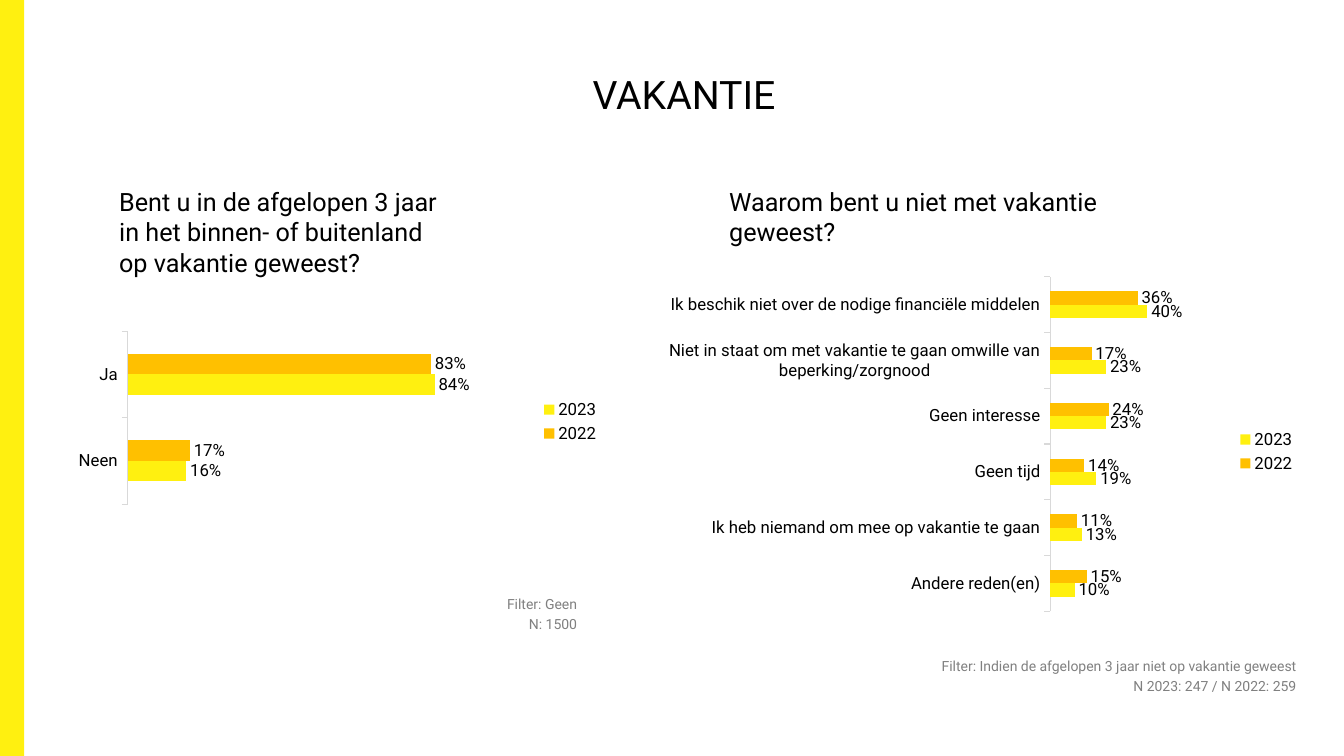
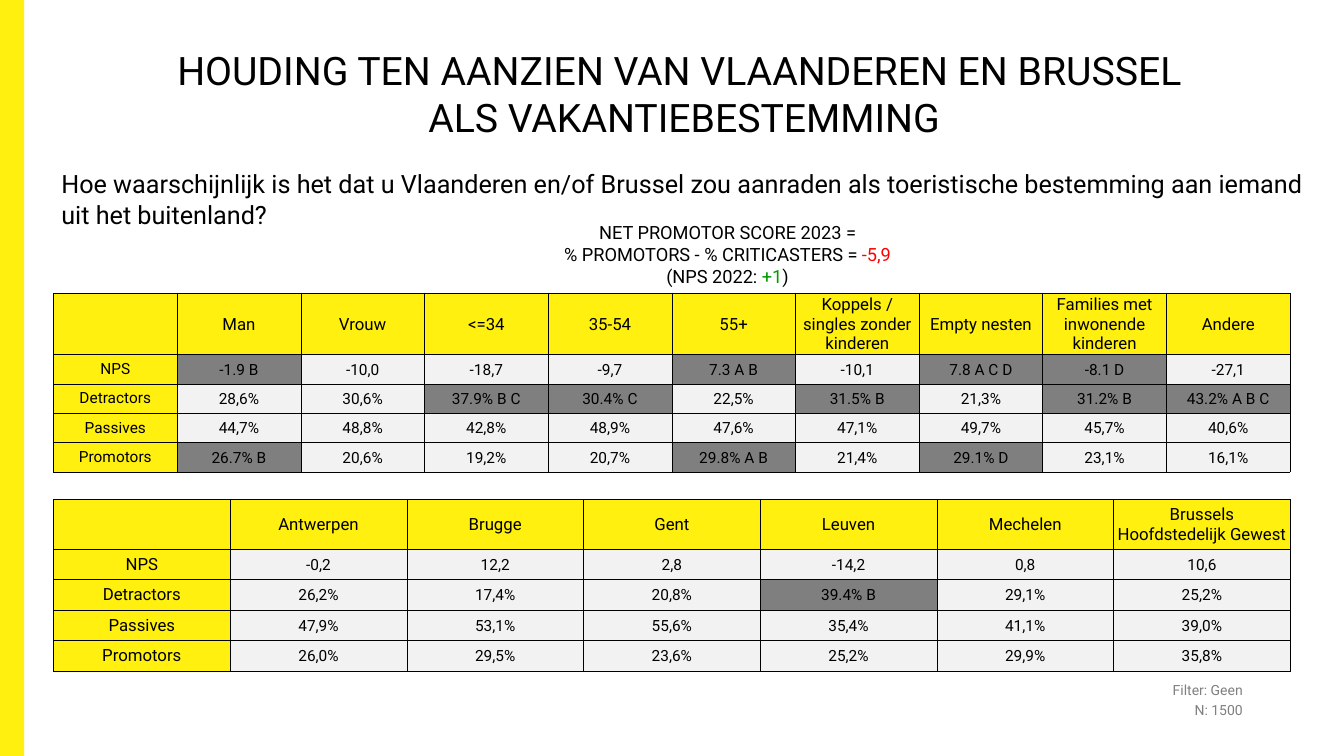
"""Build two survey slides about holidays: bar charts and score tables."""
import dataclasses
import typing

import lxml.etree
import pptx
import pptx.chart.data
import pptx.dml.color
import pptx.enum.chart
import pptx.enum.shapes
import pptx.enum.text
import pptx.oxml.ns
import pptx.util

EMU_PER_PX = 9525
FONT = "Roboto"
BLACK, GREY, RED, GREEN = "000000", "808080", "FF0000", "009900"
YELLOW, ORANGE, AXIS = "FFF010", "FFC000", "D9D9D9"
CELL, SIGNIFICANT = "F2F2F2", "7F7F7F"
ALIGN = pptx.enum.text.PP_ALIGN
ANCHOR = pptx.enum.text.MSO_ANCHOR
qn = pptx.oxml.ns.qn


def px(n: int) -> int:
    return pptx.util.Emu(n * EMU_PER_PX)


def rgb(color: str) -> pptx.dml.color.RGBColor:
    return pptx.dml.color.RGBColor.from_string(color)


class Box(typing.NamedTuple):
    left: int
    top: int
    width: int
    height: int

    def emu(self) -> list[int]:
        return [px(n) for n in self]


@dataclasses.dataclass
class BarChart:
    box: Box
    plot: tuple[float, float, float, float]
    categories: list[str]
    values_2022: list[float]
    values_2023: list[float]


@dataclasses.dataclass
class ScoreTable:
    box: Box
    header_height: int
    row_height: int
    label_size: int
    headers: list[str]
    rows: dict[str, list[str]]


def style_font(font, size: float, color: str = BLACK) -> None:
    font.name = FONT
    font.size = pptx.util.Pt(size)
    font.bold = False
    font.color.rgb = rgb(color)


def add_text(s, box: Box, lines: list[str], size: float, color: str = BLACK,
             align=ALIGN.LEFT, anchor=ANCHOR.TOP, gap: float = 0):
    tf = s.shapes.add_textbox(*box.emu()).text_frame
    tf.word_wrap = True
    tf.vertical_anchor = anchor
    for i, line in enumerate(lines):
        p = tf.add_paragraph() if i else tf.paragraphs[0]
        p.text = line
        p.alignment = align
        if i and gap:
            p.space_before = pptx.util.Pt(gap)
        for r in p.runs:
            style_font(r.font, size, color)
    return tf


def add_question(s, box: Box, question: str) -> None:
    add_text(s, box, [question], 18)


def add_filter(s, left: int, top: int, lines: list[str]) -> None:
    add_text(s, Box(left, top, 366, 51), lines, 10, GREY, ALIGN.RIGHT, gap=2.4)


def add_slide(prs, title: str):
    s = prs.slides.add_slide(prs.slide_layouts[6])
    rect = pptx.enum.shapes.MSO_SHAPE.RECTANGLE
    band = s.shapes.add_shape(rect, *Box(0, 0, 23, 720).emu())
    band.shadow.inherit = False
    band.fill.solid()
    band.fill.fore_color.rgb = rgb(YELLOW)
    band.line.fill.background()
    add_text(s, Box(23, 29, 1257, 120), [title], 28,
             align=ALIGN.CENTER, anchor=ANCHOR.MIDDLE)
    return s


def set_plot_layout(chart, plot: tuple[float, float, float, float]) -> None:
    area = chart.element.find(f"{qn('c:chart')}/{qn('c:plotArea')}")
    for old in area.findall(qn("c:layout")):
        area.remove(old)
    layout = lxml.etree.SubElement(area, qn("c:layout"))
    area.insert(0, layout)
    manual = lxml.etree.SubElement(layout, qn("c:manualLayout"))
    settings = {"layoutTarget": "inner", "xMode": "edge", "yMode": "edge"}
    settings.update(zip("xywh", map(str, plot)))
    for tag, value in settings.items():
        lxml.etree.SubElement(manual, qn(f"c:{tag}")).set("val", value)


def add_bar_chart(s, spec_: BarChart) -> None:
    enums = pptx.enum.chart
    data = pptx.chart.data.CategoryChartData(number_format="0%")
    data.categories = spec_.categories
    data.add_series("2022", spec_.values_2022)
    data.add_series("2023", spec_.values_2023)
    chart = s.shapes.add_chart(enums.XL_CHART_TYPE.BAR_CLUSTERED,
                               *spec_.box.emu(), data).chart
    style_font(chart.font, 12)
    chart.has_title = False
    chart.has_legend = True
    chart.legend.position = enums.XL_LEGEND_POSITION.RIGHT
    chart.legend.include_in_layout = False
    style_font(chart.legend.font, 12)

    axis = chart.category_axis
    axis.reverse_order = True
    axis.has_major_gridlines = False
    axis.major_tick_mark = enums.XL_TICK_MARK.OUTSIDE
    axis.format.line.color.rgb = rgb(AXIS)
    axis.format.line.width = pptx.util.Pt(0.75)
    style_font(axis.tick_labels.font, 12)
    scale = chart.value_axis
    scale.minimum_scale, scale.maximum_scale = 0, 1
    scale.has_major_gridlines = False
    scale.visible = False

    plot = chart.plots[0]
    plot.gap_width = 219
    plot.vary_by_categories = False
    for series, color in zip(plot.series, (ORANGE, YELLOW)):
        series.format.fill.solid()
        series.format.fill.fore_color.rgb = rgb(color)
        labels = series.data_labels
        labels.show_value = True
        labels.number_format = "0%"
        labels.number_format_is_linked = False
        labels.position = enums.XL_LABEL_POSITION.OUTSIDE_END
        style_font(labels.font, 12)
    set_plot_layout(chart, spec_.plot)


def add_borders(cell) -> None:
    tc_pr = cell._tc.get_or_add_tcPr()
    for side in "LRTB":
        ln = lxml.etree.SubElement(tc_pr, qn(f"a:ln{side}"), w="6350")
        fill = lxml.etree.SubElement(ln, qn("a:solidFill"))
        lxml.etree.SubElement(fill, qn("a:srgbClr"), val=BLACK)


def fill_cell(cell, text: str, size: float, color: str, tight: bool) -> None:
    if tight:
        cell.margin_left = cell.margin_right = cell.margin_top = px(1)
        cell.margin_bottom = 0
    cell.vertical_anchor = ANCHOR.MIDDLE
    add_borders(cell)
    cell.fill.solid()
    cell.fill.fore_color.rgb = rgb(color)
    p = cell.text_frame.paragraphs[0]
    p.text = text
    p.alignment = ALIGN.CENTER
    for r in p.runs:
        style_font(r.font, size)


def add_score_table(s, t: ScoreTable) -> None:
    n_cols = len(t.headers) + 1
    table = s.shapes.add_table(len(t.rows) + 1, n_cols, *t.box.emu()).table
    table.first_row = table.horz_banding = False
    for column in table.columns:
        column.width = px(t.box.width) // n_cols
    for i, row in enumerate(table.rows):
        row.height = px(t.row_height if i else t.header_height)
    for j, header in enumerate(["", *t.headers]):
        fill_cell(table.cell(0, j), header, 12, YELLOW, j > 0)
    for i, (label, values) in enumerate(t.rows.items(), 1):
        fill_cell(table.cell(i, 0), label, t.label_size, YELLOW, False)
        for j, value in enumerate(values, 1):
            marked = any(c.isalpha() for c in value)
            fill_cell(table.cell(i, j), value, 11,
                      SIGNIFICANT if marked else CELL, True)


HOLIDAY = BarChart(Box(-115, 310, 696, 183), (0.34, 0.03, 0.5, 0.9),
                   ["Ja", "Neen"], [0.83, 0.17], [0.84, 0.16])
REASONS = BarChart(
    Box(603, 253, 641, 354), (0.62, 0.03, 0.36, 0.9),
    ["Ik beschik niet over de nodige financiële middelen",
     "Niet in staat om met vakantie te gaan omwille van beperking/zorgnood",
     "Geen interesse", "Geen tijd",
     "Ik heb niemand om mee op vakantie te gaan", "Andere reden(en)"],
    [0.36, 0.17, 0.24, 0.14, 0.11, 0.15],
    [0.4, 0.23, 0.23, 0.19, 0.13, 0.1])
PROFILES = ScoreTable(
    Box(51, 279, 1178, 169), 57, 28, 11,
    ["Man", "Vrouw", "<=34", "35-54", "55+",
     "Koppels / singles zonder kinderen", "Empty nesten",
     "Families met inwonende kinderen", "Andere"],
    {"NPS": ["-1.9 B", "-10,0", "-18,7", "-9,7", "7.3 A B", "-10,1",
             "7.8 A C D", "-8.1 D", "-27,1"],
     "Detractors": ["28,6%", "30,6%", "37.9% B C", "30.4% C", "22,5%",
                    "31.5% B", "21,3%", "31.2% B", "43.2% A B C"],
     "Passives": ["44,7%", "48,8%", "42,8%", "48,9%", "47,6%", "47,1%",
                  "49,7%", "45,7%", "40,6%"],
     "Promotors": ["26.7% B", "20,6%", "19,2%", "20,7%", "29.8% A B",
                   "21,4%", "29.1% D", "23,1%", "16,1%"]})
CITIES = ScoreTable(
    Box(51, 476, 1178, 163), 47, 29, 12,
    ["Antwerpen", "Brugge", "Gent", "Leuven", "Mechelen",
     "Brussels Hoofdstedelijk Gewest"],
    {"NPS": ["-0,2", "12,2", "2,8", "-14,2", "0,8", "10,6"],
     "Detractors": ["26,2%", "17,4%", "20,8%", "39.4% B", "29,1%", "25,2%"],
     "Passives": ["47,9%", "53,1%", "55,6%", "35,4%", "41,1%", "39,0%"],
     "Promotors": ["26,0%", "29,5%", "23,6%", "25,2%", "29,9%", "35,8%"]})
NO_FILTER = ["Filter: Geen", "N: 1500"]


def build_holiday_slide(prs) -> None:
    s = add_slide(prs, "VAKANTIE")
    add_question(s, Box(104, 173, 325, 69), "Bent u in de afgelopen 3 jaar "
                 "in het binnen- of buitenland op vakantie geweest?")
    add_filter(s, 193, 562, NO_FILTER)
    add_bar_chart(s, HOLIDAY)
    add_question(s, Box(685, 173, 475, 69),
                 "Waarom bent u niet met vakantie geweest?")
    add_bar_chart(s, REASONS)
    add_filter(s, 878, 621, [
        "Filter: Indien de afgelopen 3 jaar niet op vakantie geweest",
        "N 2023: 247 / N 2022: 259"])


def build_attitude_slide(prs) -> None:
    s = add_slide(prs, "HOUDING TEN AANZIEN VAN VLAANDEREN EN BRUSSEL \v"
                  "ALS VAKANTIEBESTEMMING")
    add_question(s, Box(49, 156, 1214, 43),
                 "Hoe waarschijnlijk is het dat u Vlaanderen en/of Brussel zou "
                 "aanraden als toeristische bestemming aan iemand uit het "
                 "buitenland?")
    add_filter(s, 827, 644, NO_FILTER)
    add_score_table(s, PROFILES)
    tf = add_text(s, Box(406, 206, 578, 73),
                  ["NET PROMOTOR SCORE 2023 = ",
                   "% PROMOTORS - % CRITICASTERS = ", "(NPS 2022: "],
                  13, align=ALIGN.CENTER)
    scores = [(1, "-5,9 ", RED), (2, "+1", GREEN), (2, ") ", BLACK)]
    for line, text, color in scores:
        r = tf.paragraphs[line].add_run()
        r.text = text
        style_font(r.font, 13, color)
    add_score_table(s, CITIES)


def main() -> None:
    prs = pptx.Presentation()
    prs.slide_width, prs.slide_height = px(1280), px(720)
    build_holiday_slide(prs)
    build_attitude_slide(prs)
    prs.save("out.pptx")


if __name__ == "__main__":
    main()
